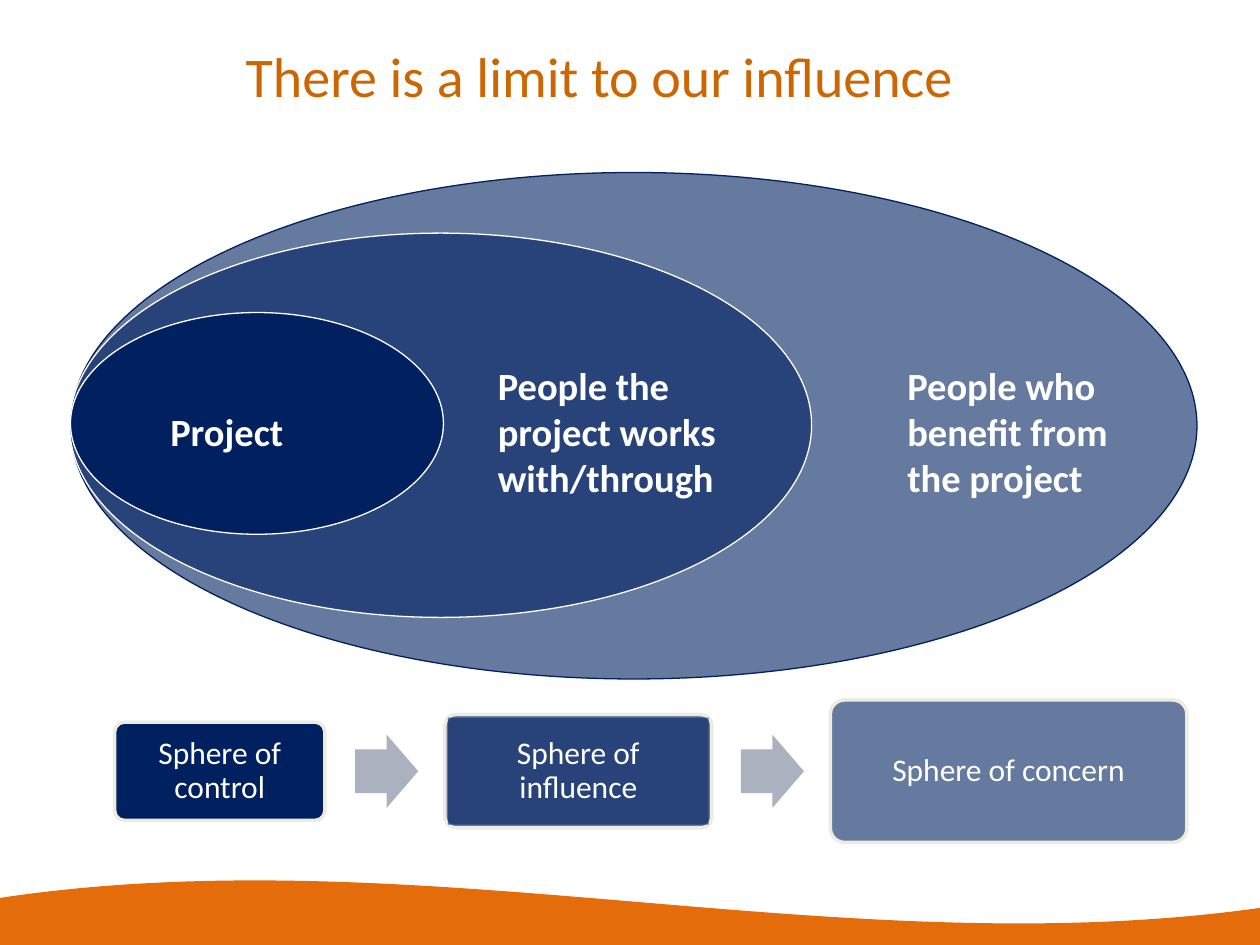
from lxml import etree
from pptx import Presentation
from pptx.dml.color import RGBColor
from pptx.enum.shapes import MSO_SHAPE
from pptx.enum.text import MSO_ANCHOR, PP_ALIGN
from pptx.oxml.ns import qn
from pptx.util import Pt

WAVE, ELLIPSE, RECT = MSO_SHAPE.WAVE, MSO_SHAPE.OVAL, MSO_SHAPE.RECTANGLE
ROUNDED, ARROW = MSO_SHAPE.ROUNDED_RECTANGLE, MSO_SHAPE.RIGHT_ARROW
MIDDLE, LEFT, CENTER = MSO_ANCHOR.MIDDLE, PP_ALIGN.LEFT, PP_ALIGN.CENTER
NAVY, WHITE, CREAM = "002060", "FFFFFF", "EEECE1"
ORANGE, TITLE_ORANGE, ARROW_GREY = "E46C0A", "CC6600", "ACB1BF"
ROW_MIDDLE = 440.7

prs = Presentation()
prs.slide_width, prs.slide_height = Pt(720), Pt(540)
slide = prs.slides.add_slide(prs.slide_layouts[5])


def add_filled(kind, box, fill, opacity=100, line=None, line_width=0.75):
    shape = slide.shapes.add_shape(kind, *map(Pt, box))
    shape.shadow.inherit = False
    shape.fill.solid()
    shape.fill.fore_color.rgb = RGBColor.from_string(fill)
    if opacity < 100:
        color = shape.fill._xPr.find(qn("a:solidFill"))[0]
        etree.SubElement(color, qn("a:alpha"), val=str(opacity * 1000))
    if line:
        shape.line.color.rgb = RGBColor.from_string(line)
        shape.line.width = Pt(line_width)
    else:
        shape.line.fill.background()
    return shape


def write(shape, text, size, color, margins, align=LEFT, bold=False):
    """Margins are left, top, right, bottom in points."""
    frame = shape.text_frame
    frame.word_wrap = True
    frame.vertical_anchor = MIDDLE
    (frame.margin_left, frame.margin_top,
     frame.margin_right, frame.margin_bottom) = map(Pt, margins)
    frame.text = text
    paragraph = frame.paragraphs[0]
    paragraph.alignment = align
    paragraph.font.name = "Calibri"
    paragraph.font.size = Pt(size)
    paragraph.font.bold = bold
    paragraph.font.color.rgb = RGBColor.from_string(color)
    return paragraph


# Footer wave, running past the slide's edges
add_filled(WAVE, (-14.4, 502.6, 756.7, 102.2), ORANGE)

title = slide.shapes.title
title.left, title.top, title.width, title.height = Pt(133.2), Pt(11.5), Pt(550.8), Pt(62.6)
write(title, "There is a limit to our influence", 32, TITLE_ORANGE, (7.2, 3.6, 10, 3.6))

# Nested spheres, from outer to inner
for box, opacity, outline in [
    ((40.3, 98.6, 643.7, 289.4), 60, NAVY),
    ((39.8, 133.2, 424, 219.6), 60, WHITE),
    ((40.3, 178.6, 213.1, 126.7), 100, WHITE),
]:
    add_filled(ELLIPSE, box, NAVY, opacity, outline)

for left, people in [
    (94.3, "Project"),
    (281.5, "People the project works with/through"),
    (515.5, "People who benefit from the project"),
]:
    label = slide.shapes.add_textbox(Pt(left), Pt(203.8), Pt(135.4), Pt(85))
    write(label, people, 22, WHITE, (3, 0, 3, 0), bold=True)

# Growing boxes, centred on one line
for left, width, height, opacity, sphere in [
    (65.5, 120.2, 56.2, 100, "Sphere of control"),
    (254.2, 152.6, 64.8, 60, "Sphere of influence"),
    (474.5, 203.8, 81.4, 60, "Sphere of concern"),
]:
    top = ROW_MIDDLE - height / 2
    holder = add_filled(ROUNDED, (left, top, width, height), NAVY, opacity, CREAM, 2)
    holder.adjustments[0] = 0.1
    if sphere == "Sphere of influence":
        # A second translucent layer deepens the colour
        holder = add_filled(RECT, (left + 1.8, top + 1.8, width - 3.6, height - 3.6), NAVY, opacity)
    write(holder, sphere, 18, WHITE, (5, 5, 5, 5), CENTER).line_spacing = 0.9

for left in (203, 423.4):
    arrow = add_filled(ARROW, (left, ROW_MIDDLE - 20.9, 36, 41.8), ARROW_GREY)
    arrow.adjustments[0] = 0.6

prs.save("out.pptx")
